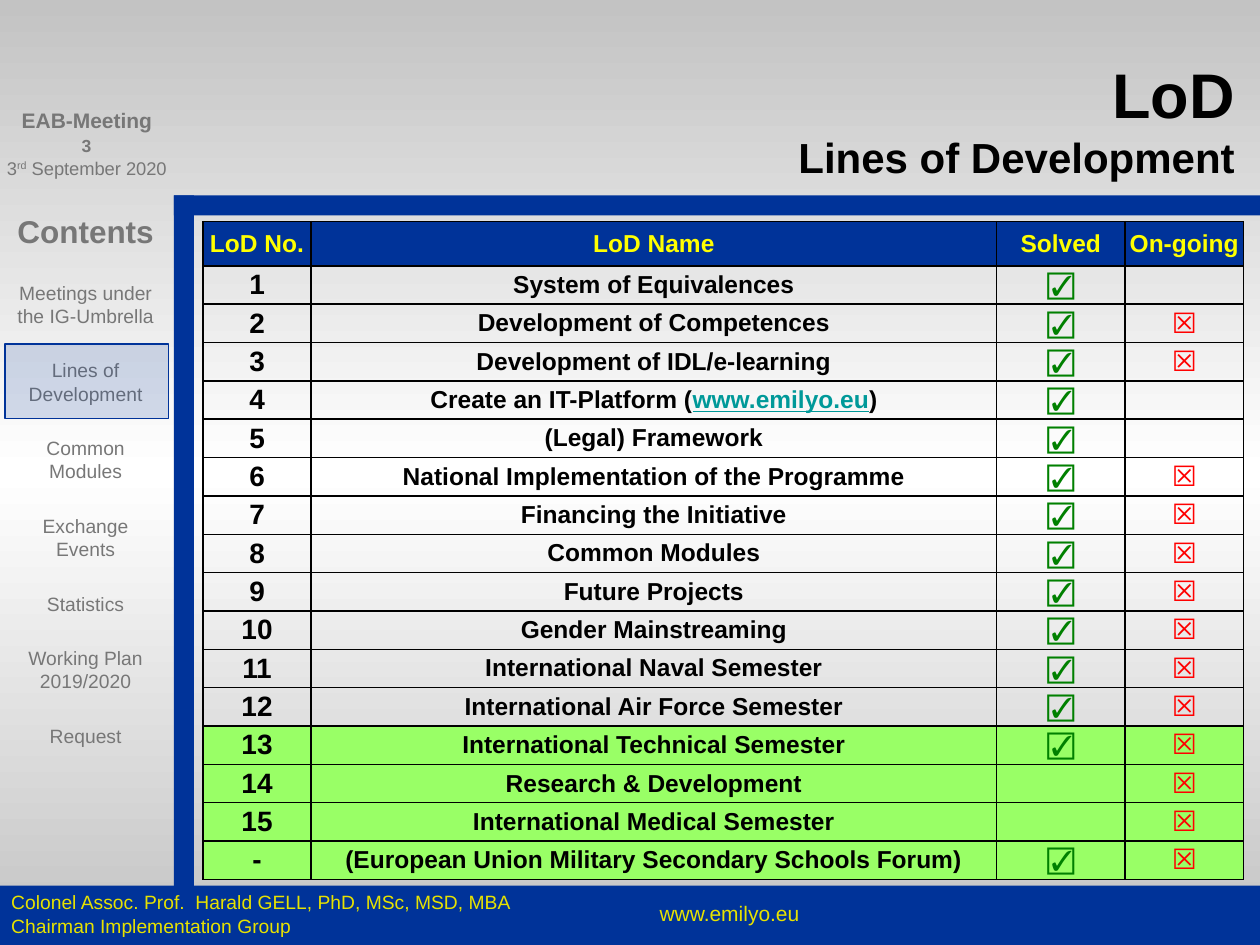
from copy import deepcopy
from dataclasses import dataclass

from lxml.etree import SubElement
from pptx import Presentation
from pptx.dml.color import RGBColor as RGB
from pptx.enum.shapes import MSO_SHAPE as SHAPE
from pptx.enum.text import MSO_ANCHOR as ANCHOR, PP_ALIGN as ALIGN
from pptx.oxml.ns import qn
from pptx.util import Inches, Pt


@dataclass(frozen=True)
class Theme:
    font: str = "Arial"
    blue: str = "003399"
    silver: str = "C3C3C3"
    white: str = "FFFFFF"
    black: str = "000000"
    grey: str = "777777"
    gold: str = "E7E200"
    yellow: str = "FFFF00"
    green: str = "008000"
    red: str = "FF0000"
    teal: str = "009999"
    lime: str = "99FF66"
    title: float = 36
    subtitle: float = 24
    heading: float = 18
    mark: float = 16
    body: float = 14
    label: float = 12
    menu: float = 11
    date: float = 10.5
    number: float = 10


T = Theme()
MENU = ["Meetings under the IG-Umbrella", "Lines of Development", "Common Modules",
        "Exchange Events", "Statistics", "Working Plan 2019/2020", "Request"]
SITE = "www.emilyo.eu"
HEADER = ["LoD No.", "LoD Name", "Solved", "On-going"]
COL_WIDTHS = [0.86, 5.44, 1.02, 0.94]
LINES = [
    ("1", "System of Equivalences", True, False),
    ("2", "Development of Competences", True, True),
    ("3", "Development of IDL/e-learning", True, True),
    ("4", f"Create an IT-Platform ({SITE})", True, False),
    ("5", "(Legal) Framework", True, False),
    ("6", "National Implementation of the Programme", True, True),
    ("7", "Financing the Initiative", True, True),
    ("8", "Common Modules", True, True),
    ("9", "Future Projects", True, True),
    ("10", "Gender Mainstreaming", True, True),
    ("11", "International Naval Semester", True, True),
    ("12", "International Air Force Semester", True, True),
    ("13", "International Technical Semester", True, True),
    ("14", "Research & Development", False, True),
    ("15", "International Medical Semester", False, True),
    ("-", "(European Union Military Secondary Schools Forum)", True, True),
]
FIRST_LIME = 12


def add_text(p, text, size=T.body, color=T.black, bold=False, underline=False, raised=False):
    r = p.add_run()
    r.text = text
    font = r.font
    font.name, font.size, font.bold = T.font, Pt(size), bold
    font.color.rgb = RGB.from_string(color)
    if underline:
        font.underline = True
    if raised:
        r._r.get_or_add_rPr().set("baseline", "30000")


def add_box(s, box, inset=(0.1, 0.05), anchor=ANCHOR.TOP, wrap=True):
    tf = s.shapes.add_textbox(*map(Inches, box)).text_frame
    tf.word_wrap, tf.vertical_anchor = wrap, anchor
    tf.margin_left = tf.margin_right = Inches(inset[0])
    tf.margin_top = tf.margin_bottom = Inches(inset[1])
    return tf


def add_paragraph(tf, align=ALIGN.CENTER, first=False):
    p = tf.paragraphs[0] if first else tf.add_paragraph()
    p.alignment = align
    return p


def add_bar(s, box, alpha=None):
    sp = s.shapes.add_shape(SHAPE.RECTANGLE, *map(Inches, box))
    sp.shadow.inherit = False
    sp.fill.solid()
    sp.fill.fore_color.rgb = RGB.from_string(T.blue)
    if alpha is None:
        sp.line.fill.background()
    else:
        color = sp._element.spPr.find(qn("a:solidFill"))[0]
        SubElement(color, qn("a:alpha")).set("val", str(alpha * 1000))
        sp.line.color.rgb = RGB.from_string(T.blue)
        sp.line.width = Pt(0.75)


def paint_background(s):
    fill = s.background.fill
    fill.gradient()
    fill.gradient_angle = 270
    first, last = fill.gradient_stops
    stop_list = first._gs.getparent()
    stop_list.insert(1, deepcopy(first._gs))
    for stop, position, color in zip(fill.gradient_stops, (0, 0.5, 1),
                                     (T.silver, T.white, T.silver)):
        stop.position = position
        stop.color.rgb = RGB.from_string(color)


def add_meeting(s, box):
    x, y, w, h = box
    tf = add_box(s, box, (0, 0))
    add_text(add_paragraph(tf, first=True), "EAB-Meeting", T.label, T.grey, True)
    p = add_paragraph(tf)
    p.space_before = Pt(14)
    add_text(p, "3", T.date, T.grey)
    add_text(p, "rd", T.date, T.grey, raised=True)
    add_text(p, " September 2020", T.date, T.grey)
    number = add_box(s, (x + w / 2 - 0.25, y + 0.17, 0.49, 0.27), wrap=False)
    add_text(add_paragraph(number, first=True), "3", T.number, T.grey, True)


def add_menu(s, box):
    x, y, w, h = box
    tf = add_box(s, box, (0.04, 0.04))
    p = add_paragraph(tf, first=True)
    p.space_after = Pt(18)
    add_text(p, "Contents", T.heading, T.grey, True)
    for item in MENU:
        p = add_paragraph(tf)
        p.space_after = Pt(18)
        add_text(p, item, T.menu, T.grey)
    add_bar(s, (x - 0.01, y + 1.09, w + 0.04, 0.59), alpha=16)


def add_title(s, box):
    tf = add_box(s, box, (0, 0), ANCHOR.BOTTOM)
    p = add_paragraph(tf, ALIGN.RIGHT, first=True)
    add_text(p, "LoD", T.title, bold=True)
    p.add_line_break()
    add_text(p, "Lines of Development", T.subtitle, bold=True)


def add_footer(s, box):
    x, y, w, h = box
    add_bar(s, box)
    site = add_box(s, (x + 4.9, y + 0.07, 1.78, 0.35))
    add_text(add_paragraph(site, first=True), SITE, T.label, T.gold)
    author = add_box(s, (x - 0.01, y - 0.01, 4.99, 0.48))
    add_text(add_paragraph(author, ALIGN.LEFT, first=True),
             "Colonel Assoc. Prof.  Harald GELL, PhD, MSc, MSD, MBA", T.menu, T.gold)
    add_text(add_paragraph(author, ALIGN.LEFT), "Chairman Implementation Group", T.menu, T.gold)


def fill_cell(cell, text, size, color, fill=None):
    cell.margin_left = cell.margin_right = Inches(0.03)
    cell.margin_top = cell.margin_bottom = 0
    cell.vertical_anchor = ANCHOR.MIDDLE
    for side in ("lnL", "lnR", "lnT", "lnB"):
        ln = SubElement(cell._tc.get_or_add_tcPr(), qn(f"a:{side}"), w=str(Pt(1)))
        SubElement(SubElement(ln, qn("a:solidFill")), qn("a:srgbClr"), val=T.black)
    if fill:
        cell.fill.solid()
        cell.fill.fore_color.rgb = RGB.from_string(fill)
    else:
        cell.fill.background()
    p = add_paragraph(cell.text_frame, first=True)
    p.font.size = Pt(size)
    before, link, after = text.partition(SITE)
    for part in filter(None, (before, link, after)):
        is_link = part == SITE
        add_text(p, part, size, T.teal if is_link else color, True, underline=is_link)


def add_lines_table(s, box):
    header_height = 0.35
    table = s.shapes.add_table(len(LINES) + 1, len(HEADER), *map(Inches, box)).table
    table.first_row = table.horz_banding = False
    for column, width in zip(table.columns, COL_WIDTHS):
        column.width = Inches(width)
    for row in table.rows:
        row.height = Inches((box[3] - header_height) / len(LINES))
    table.rows[0].height = Inches(header_height)
    for col, text in enumerate(HEADER):
        fill_cell(table.cell(0, col), text, T.body, T.yellow, T.blue)
    for i, (number, name, solved, ongoing) in enumerate(LINES):
        fill = T.lime if i >= FIRST_LIME else None
        values = [(number, T.mark, T.black), (name, T.body, T.black),
                  ("☑" if solved else "", T.mark, T.green),
                  ("☒" if ongoing else "", T.mark, T.red)]
        for col, value in enumerate(values):
            fill_cell(table.cell(i + 1, col), *value, fill)


def main():
    prs = Presentation()
    prs.slide_width, prs.slide_height = Inches(10), Inches(7.5)
    s = prs.slides.add_slide(prs.slide_layouts[6])
    paint_background(s)
    add_bar(s, (1.38, 1.55, 0.16, 5.61))
    add_bar(s, (1.38, 1.55, 8.62, 0.16))
    add_meeting(s, (0, 0.85, 1.38, 0.66))
    add_menu(s, (0.05, 1.64, 1.26, 5.34))
    add_footer(s, (0, 7.03, 10, 0.47))
    add_title(s, (1.38, 0.19, 8.42, 1.25))
    add_lines_table(s, (1.61, 1.76, 8.27, 5.22))
    prs.save("out.pptx")


if __name__ == "__main__":
    main()
